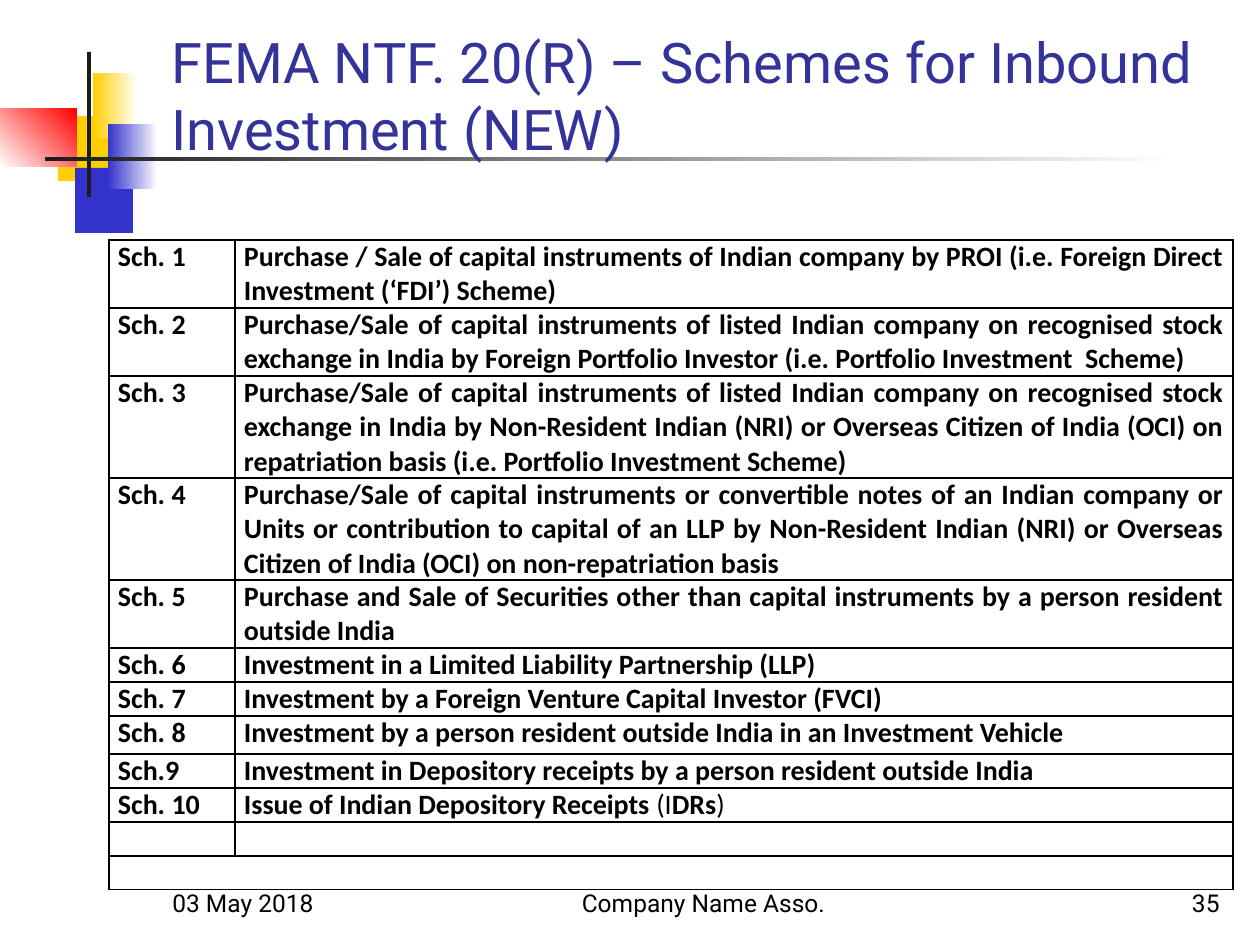
from dataclasses import dataclass

from lxml.etree import SubElement
from pptx import Presentation
from pptx.dml.color import RGBColor
from pptx.enum.shapes import MSO_SHAPE
from pptx.enum.text import MSO_ANCHOR, PP_ALIGN
from pptx.oxml.ns import qn
from pptx.util import Pt

EMU_PER_PX = 914400 / 126


def px(length):
    return round(length * EMU_PER_PX)


def rgb(color):
    return RGBColor.from_string(color)


@dataclass(frozen=True)
class Theme:
    yellow: str = "FFCF01"
    blue: str = "3333CC"
    red: str = "FF0000"
    dark: str = "1C1C1C"
    white: str = "FFFFFF"
    title: str = "333399"
    ink: str = "000000"
    heading_font: str = "Roboto"
    table_font: str = "Calibri"
    title_size: int = 32
    table_size: int = 16
    footer_size: int = 14


def write_text(frame, pieces, *, font, size, color, bold=False, align=PP_ALIGN.LEFT):
    """Fill the first paragraph; pieces is a string or a list of (text, bold)."""
    paragraph = frame.paragraphs[0]
    paragraph.alignment = align
    if isinstance(pieces, str):
        pieces = [(pieces, bold)]
    for words, is_bold in pieces:
        run = paragraph.add_run()
        run.text = words
        run.font.name = font
        run.font.size = Pt(size)
        run.font.bold = is_bold
        run.font.color.rgb = rgb(color)


class SlideBuilder:
    def __init__(self, slide, theme):
        self.slide = slide
        self.theme = theme

    def block(self, left, top, width, height, start, end=None, angle=0):
        """Add a borderless rectangle, blended from start to end if end is given."""
        shape = self.slide.shapes.add_shape(
            MSO_SHAPE.RECTANGLE, px(left), px(top), px(width), px(height))
        shape.shadow.inherit = False
        shape.line.fill.background()
        if end is None:
            shape.fill.solid()
            shape.fill.fore_color.rgb = rgb(start)
        else:
            shape.fill.gradient()
            shape.fill.gradient_angle = angle
            for stop, color in zip(shape.fill.gradient_stops, (start, end)):
                stop.color.rgb = rgb(color)

    def label(self, left, top, width, height, words, **text_format):
        box = self.slide.shapes.add_textbox(px(left), px(top), px(width), px(height))
        frame = box.text_frame
        frame.word_wrap = True
        frame.vertical_anchor = MSO_ANCHOR.BOTTOM
        write_text(frame, words, font=self.theme.heading_font, **text_format)

    def border(self, cell):
        properties = cell._tc.get_or_add_tcPr()
        for position, side in enumerate(("lnL", "lnR", "lnT", "lnB")):
            line = SubElement(properties, qn(f"a:{side}"), w=str(Pt(1)))
            fill = SubElement(line, qn("a:solidFill"))
            SubElement(fill, qn("a:srgbClr"), val=self.theme.ink)
            properties.insert(position, line)

    def table(self, left, top, column_widths, row_heights, rows):
        grid = self.slide.shapes.add_table(
            len(rows), len(column_widths), px(left), px(top),
            px(sum(column_widths)), px(sum(row_heights))).table
        grid.first_row = grid.horz_banding = False
        for column, width in zip(grid.columns, column_widths):
            column.width = px(width)
        for row, height, contents in zip(grid.rows, row_heights, rows):
            row.height = px(height)
            for cell, content in zip(row.cells, contents):
                self.fill_cell(cell, content)
        return grid

    def fill_cell(self, cell, content):
        theme = self.theme
        cell.margin_left = cell.margin_right = px(9)
        cell.margin_top = cell.margin_bottom = 0
        cell.fill.background()
        self.border(cell)
        if content:
            align = PP_ALIGN.JUSTIFY if isinstance(content, str) else PP_ALIGN.LEFT
            write_text(cell.text_frame, content, font=theme.table_font,
                       size=theme.table_size, color=theme.ink, bold=True, align=align)
        else:
            SubElement(cell.text_frame.paragraphs[0]._p, qn("a:endParaRPr"),
                       sz=str(theme.table_size * 100))


SCHEDULES = [  # number, description, lines of text
    ("Sch. 1", "Purchase / Sale of capital instruments of Indian company by PROI "
     "(i.e. Foreign Direct Investment (‘FDI’) Scheme)", 2),
    ("Sch. 2", "Purchase/Sale of capital instruments of listed Indian company on "
     "recognised stock exchange in India by Foreign Portfolio Investor "
     "(i.e. Portfolio Investment  Scheme)", 2),
    ("Sch. 3", "Purchase/Sale of capital instruments of listed Indian company on "
     "recognised stock exchange in India by Non-Resident Indian (NRI) or Overseas "
     "Citizen of India (OCI) on repatriation basis "
     "(i.e. Portfolio Investment Scheme)", 3),
    ("Sch. 4", "Purchase/Sale of capital instruments or convertible notes of an "
     "Indian company or Units or contribution to capital of an LLP by Non-Resident "
     "Indian (NRI) or Overseas Citizen of India (OCI) on non-repatriation basis", 3),
    ("Sch. 5", "Purchase and Sale of Securities other than capital instruments by "
     "a person resident outside India", 2),
    ("Sch. 6", "Investment in a Limited Liability Partnership (LLP)", 1),
    ("Sch. 7", "Investment by a Foreign Venture Capital Investor (FVCI)", 1),
    ("Sch. 8", "Investment by a person resident outside India in an Investment "
     "Vehicle", 1),
    ("Sch.9", "Investment in Depository receipts by a person resident outside "
     "India", 1),
    ("Sch. 10", [("Issue of Indian Depository Receipts ", True), ("(I", False),
                 ("DRs", True), (")", False)], 1),
    ("", "", 1),
    ("", "", 1),
]
LINE_HEIGHT = 34
SCHEDULE_8_HEIGHT = 38


def main():
    theme = Theme()
    deck = Presentation()
    deck.slide_width, deck.slide_height = px(1260), px(945)
    builder = SlideBuilder(deck.slides.add_slide(deck.slide_layouts[6]), theme)

    builder.block(58, 116, 60, 65, theme.yellow)
    builder.block(75, 168, 58, 65, theme.blue)
    builder.block(93, 73, 45, 65, theme.yellow, theme.white)
    builder.block(108, 124, 50, 65, theme.blue, theme.white)
    builder.block(0, 109, 77, 58, theme.white, theme.red, angle=45)
    builder.block(87, 52, 4, 145, theme.dark)
    builder.block(45, 157, 1134, 4, theme.dark, theme.white)

    for left, width, words, align in (
        (160, 262, "03 May 2018", PP_ALIGN.LEFT),
        (504, 399, "Company Name Asso.", PP_ALIGN.CENTER),
        (970, 262, "35", PP_ALIGN.RIGHT),
    ):
        builder.label(left, 861, width, 63, words, size=theme.footer_size,
                      color=theme.ink, align=align)
    builder.label(159, 29, 1073, 139,
                  "FEMA NTF. 20(R) – Schemes for Inbound Investment (NEW)",
                  size=theme.title_size, color=theme.title)

    heights = [SCHEDULE_8_HEIGHT if number == "Sch. 8" else lines * LINE_HEIGHT
               for number, _, lines in SCHEDULES]
    schedules = builder.table(109, 240, [126, 998], heights,
                              [schedule[:2] for schedule in SCHEDULES])
    last = len(SCHEDULES) - 1
    schedules.cell(last, 0).merge(schedules.cell(last, 1))

    deck.save("out.pptx")


if __name__ == "__main__":
    main()
